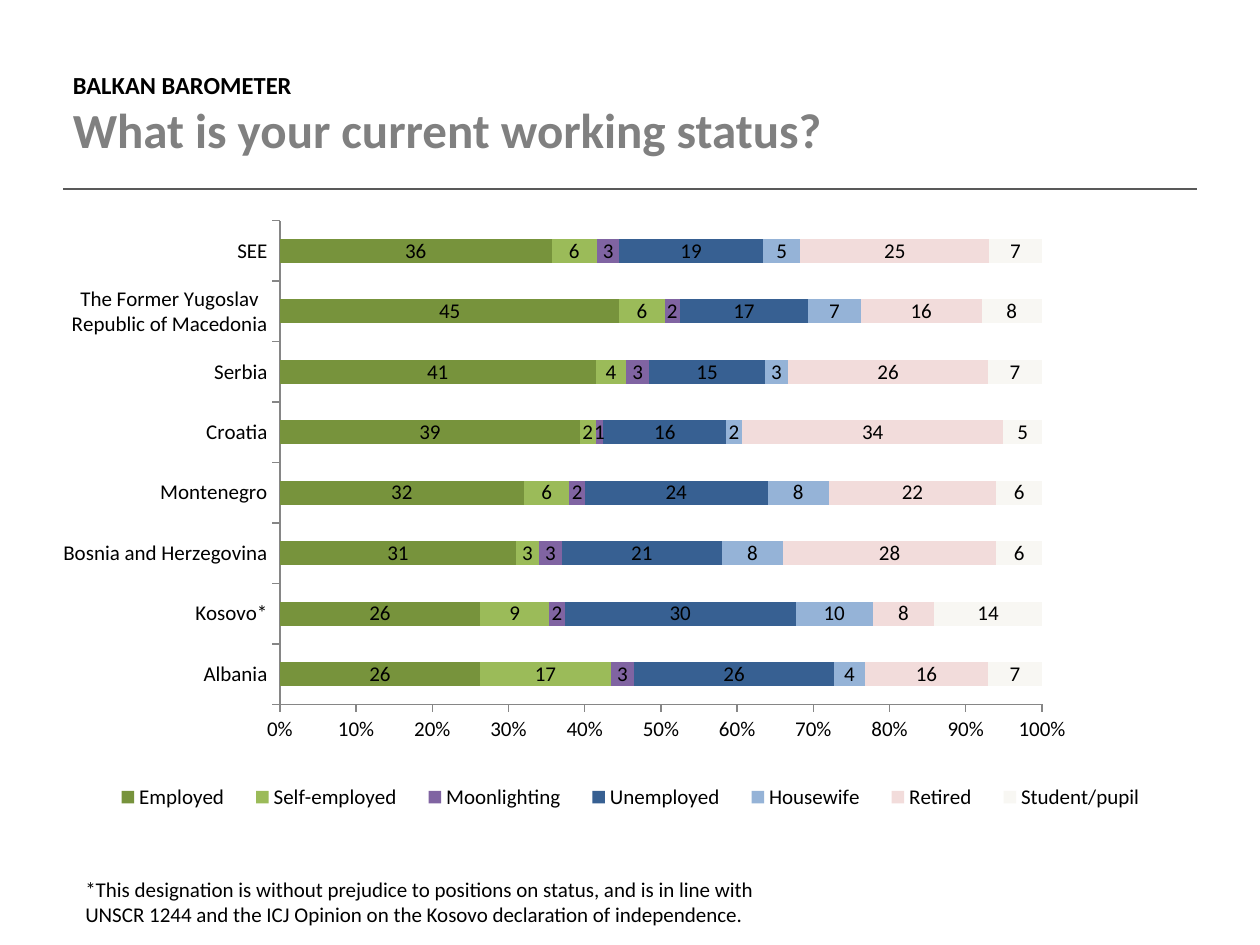
from lxml import etree
from pptx import Presentation
from pptx.chart.data import CategoryChartData
from pptx.dml.color import RGBColor
from pptx.enum.chart import XL_CHART_TYPE as ChartType
from pptx.enum.chart import XL_LEGEND_POSITION as LegendPosition
from pptx.enum.chart import XL_TICK_MARK as TickMark
from pptx.enum.shapes import MSO_CONNECTOR as Connector
from pptx.enum.text import MSO_ANCHOR as Anchor
from pptx.oxml.ns import qn
from pptx.util import Cm, Pt

FONT = "Calibri"
COUNTRIES = [
    "Albania", "Kosovo*", "Bosnia and Herzegovina", "Montenegro", "Croatia",
    "Serbia", "The Former Yugoslav Republic of Macedonia", "SEE",
]
STATUSES = [
    ("Employed", "77933C", (26, 26, 31, 32, 39, 41, 45, 36)),
    ("Self-employed", "9BBB59", (17, 9, 3, 6, 2, 4, 6, 6)),
    ("Moonlighting", "8064A2", (3, 2, 3, 2, 1, 3, 2, 3)),
    ("Unemployed", "376092", (26, 30, 21, 24, 16, 15, 17, 19)),
    ("Housewife", "95B3D7", (4, 10, 8, 8, 2, 3, 7, 5)),
    ("Retired", "F2DCDB", (16, 8, 28, 22, 34, 26, 16, 25)),
    ("Student/pupil", "F8F7F3", (7, 14, 6, 6, 5, 7, 8, 7)),
]


def color(hex_value):
    return RGBColor.from_string(hex_value)


def style(font, size, hex_value, bold=False):
    font.name = FONT
    font.size = Pt(size)
    font.bold = bold
    font.color.rgb = color(hex_value)


def add_heading(slide, left, top, width, height):
    heading = slide.shapes.add_textbox(Cm(left), Cm(top), Cm(width), Cm(height)).text_frame
    heading.word_wrap = True
    heading.vertical_anchor = Anchor.MIDDLE
    heading.margin_left = heading.margin_right = 0
    heading.margin_top = heading.margin_bottom = 0
    heading.text = "BALKAN BAROMETER\nWhat is your current working status?"
    survey, question = heading.paragraphs
    style(survey.font, 14, "000000", bold=True)
    style(question.font, 28, "808080", bold=True)


def add_rule(slide, left, top, width):
    rule = slide.shapes.add_connector(
        Connector.STRAIGHT, Cm(left), Cm(top), Cm(left + width), Cm(top))
    rule.line.color.rgb = color("595959")
    rule.line.width = Pt(1)
    etree.SubElement(rule._element.spPr, qn("a:effectLst"))


def set_layout(parent, index, box, inner=False):
    for old in parent.findall(qn("c:layout")):
        parent.remove(old)
    layout = etree.Element(qn("c:layout"))
    manual = etree.SubElement(layout, qn("c:manualLayout"))
    settings = [("layoutTarget", "inner")] if inner else []
    settings += [("xMode", "edge"), ("yMode", "edge"), *zip("xywh", box)]
    for tag, value in settings:
        etree.SubElement(manual, qn(f"c:{tag}")).set("val", str(value))
    parent.insert(index, layout)


def style_axis(axis):
    axis.has_major_gridlines = False
    axis.major_tick_mark = TickMark.OUTSIDE
    axis.minor_tick_mark = TickMark.NONE
    axis.format.line.color.rgb = color("868686")
    axis.format.line.width = Pt(0.75)


def add_status_chart(slide, left, top, width, height):
    answers = CategoryChartData(number_format="#,##0")
    answers.categories = COUNTRIES
    for status, _, shares in STATUSES:
        answers.add_series(status, shares)
    chart = slide.shapes.add_chart(
        ChartType.BAR_STACKED_100, Cm(left), Cm(top), Cm(width), Cm(height), answers).chart
    chart.has_title = False
    style(chart.font, 12, "000000")

    bars = chart.plots[0]
    bars.gap_width = 150
    bars.overlap = 100
    bars.vary_by_categories = False
    for series, (_, fill, _) in zip(bars.series, STATUSES):
        series.format.fill.solid()
        series.format.fill.fore_color.rgb = color(fill)
        series.data_labels.show_value = True
        series.data_labels.number_format = "#,##0"
        series.data_labels.number_format_is_linked = False

    style_axis(chart.category_axis)
    style_axis(chart.value_axis)
    chart.value_axis.major_unit = 0.1
    chart.value_axis.tick_labels.number_format = "0%"
    chart.value_axis.tick_labels.number_format_is_linked = False

    chart.has_legend = True
    chart.legend.position = LegendPosition.RIGHT
    chart.legend.include_in_layout = False
    set_layout(chart.legend._element, 1, (0.03, 0.89, 0.95, 0.09))
    plot_area = chart._chartSpace.chart.plotArea
    set_layout(plot_area, 0, (0.193, 0.034, 0.678, 0.756), inner=True)


def add_footnote(slide, left, top, width, height):
    footnote = slide.shapes.add_textbox(Cm(left), Cm(top), Cm(width), Cm(height)).text_frame
    footnote.word_wrap = True
    footnote.text = (
        "*This designation is without prejudice to positions on status, and is in line with "
        "UNSCR 1244 and the ICJ Opinion on the Kosovo declaration of independence.")
    style(footnote.paragraphs[0].font, 12, "000000")


def main():
    deck = Presentation()
    deck.slide_width, deck.slide_height = Cm(25.4), Cm(19.05)
    slide = deck.slides.add_slide(deck.slide_layouts[6])
    add_rule(slide, 1.27, 3.81, 22.86)
    add_status_chart(slide, 1.27, 4.01, 22.66, 12.9)
    add_heading(slide, 1.47, 0.99, 21.08, 2.62)
    add_footnote(slide, 1.47, 17.55, 14.4, 1.27)
    deck.save("out.pptx")


if __name__ == "__main__":
    main()
